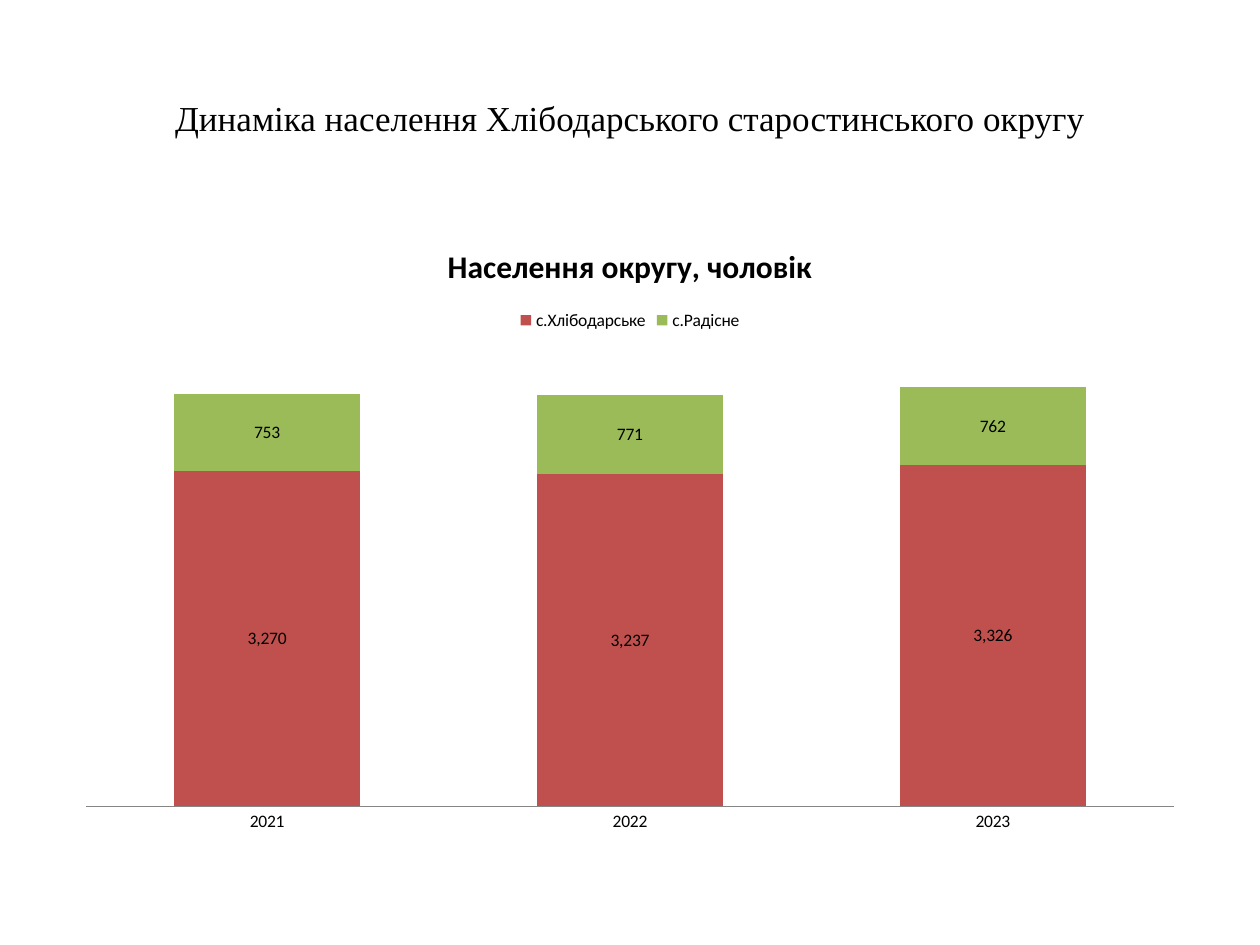
from dataclasses import dataclass

import pptx
import pptx.chart.data
import pptx.dml.color
import pptx.enum.chart
import pptx.enum.text
import pptx.oxml
import pptx.oxml.ns
import pptx.util

PX = 914400 / 126


@dataclass(frozen=True)
class Village:
    name: str
    population: tuple[int, ...]
    color: str


YEARS = ("2021", "2022", "2023")
VILLAGES = (
    Village("с.Хлібодарське", (3270, 3237, 3326), "C0504D"),
    Village("с.Радісне", (753, 771, 762), "9BBB59"),
)


def px(n: int) -> int:
    return round(n * PX)


def rgb(color: str) -> pptx.dml.color.RGBColor:
    return pptx.dml.color.RGBColor.from_string(color)


def format_font(font, size: int, name: str = "Calibri", color: str = "000000", bold: bool = False) -> None:
    font.size = pptx.util.Pt(size)
    font.name = name
    font.bold = bold
    font.color.rgb = rgb(color)


def set_text(tf, text: str, **fmt) -> None:
    p = tf.paragraphs[0]
    p.alignment = pptx.enum.text.PP_ALIGN.CENTER
    r = p.add_run()
    r.text = text
    format_font(r.font, **fmt)


def set_plot_layout(chart, x: float, y: float, w: float, h: float) -> None:
    area = chart._chartSpace.chart.plotArea
    for old in area.findall(pptx.oxml.ns.qn("c:layout")):
        area.remove(old)
    values = "".join(f'<c:{k} val="{v}"/>' for k, v in zip("xywh", (x, y, w, h)))
    area.insert(0, pptx.oxml.parse_xml(
        f'<c:layout {pptx.oxml.ns.nsdecls("c")}><c:manualLayout>'
        '<c:layoutTarget val="inner"/><c:xMode val="edge"/><c:yMode val="edge"/>'
        f'{values}</c:manualLayout></c:layout>'))


def style_series(series, village: Village) -> None:
    series.format.fill.solid()
    series.format.fill.fore_color.rgb = rgb(village.color)
    labels = series.data_labels
    labels.show_value = True
    labels.number_format = "#,##0"
    labels.number_format_is_linked = False
    labels.position = pptx.enum.chart.XL_LABEL_POSITION.CENTER
    format_font(labels.font, 10)


def add_population_chart(s, x: int, y: int, w: int, h: int) -> None:
    data = pptx.chart.data.CategoryChartData(number_format="#,##0")
    data.categories = YEARS
    for village in VILLAGES:
        data.add_series(village.name, village.population)
    chart = s.shapes.add_chart(
        pptx.enum.chart.XL_CHART_TYPE.COLUMN_STACKED, px(x), px(y), px(w), px(h), data).chart
    format_font(chart.font, 10)
    chart.has_title = True
    set_text(chart.chart_title.text_frame, "Населення округу, чоловік", size=18, bold=True)
    chart.chart_title.include_in_layout = False
    chart.has_legend = True
    chart.legend.position = pptx.enum.chart.XL_LEGEND_POSITION.TOP
    chart.legend.include_in_layout = False
    format_font(chart.legend.font, 10)

    plot = chart.plots[0]
    plot.gap_width = 95
    plot.overlap = 100
    plot.vary_by_categories = False
    for series, village in zip(plot.series, VILLAGES):
        style_series(series, village)

    axis = chart.category_axis
    axis.major_tick_mark = pptx.enum.chart.XL_TICK_MARK.NONE
    axis.format.line.color.rgb = rgb("868686")
    axis.format.line.width = pptx.util.Pt(0.75)
    chart.value_axis.visible = False
    chart.value_axis.has_major_gridlines = False
    chart.value_axis.minimum_scale = 0
    chart.value_axis.maximum_scale = 4500
    set_plot_layout(chart, 0.02, 0.2, 0.96, 0.74)


def main() -> None:
    prs = pptx.Presentation()
    prs.slide_width, prs.slide_height = px(1260), px(945)
    s = prs.slides.add_slide(prs.slide_layouts[5])
    title = s.shapes.title
    title.left, title.top, title.width, title.height = px(63), px(38), px(1134), px(158)
    title.text_frame.vertical_anchor = pptx.enum.text.MSO_ANCHOR.MIDDLE
    set_text(title.text_frame, "Динаміка населення Хлібодарського старостинського округу",
             size=20, name="Times New Roman")
    add_population_chart(s, 63, 220, 1134, 624)
    prs.save("out.pptx")


if __name__ == "__main__":
    main()
